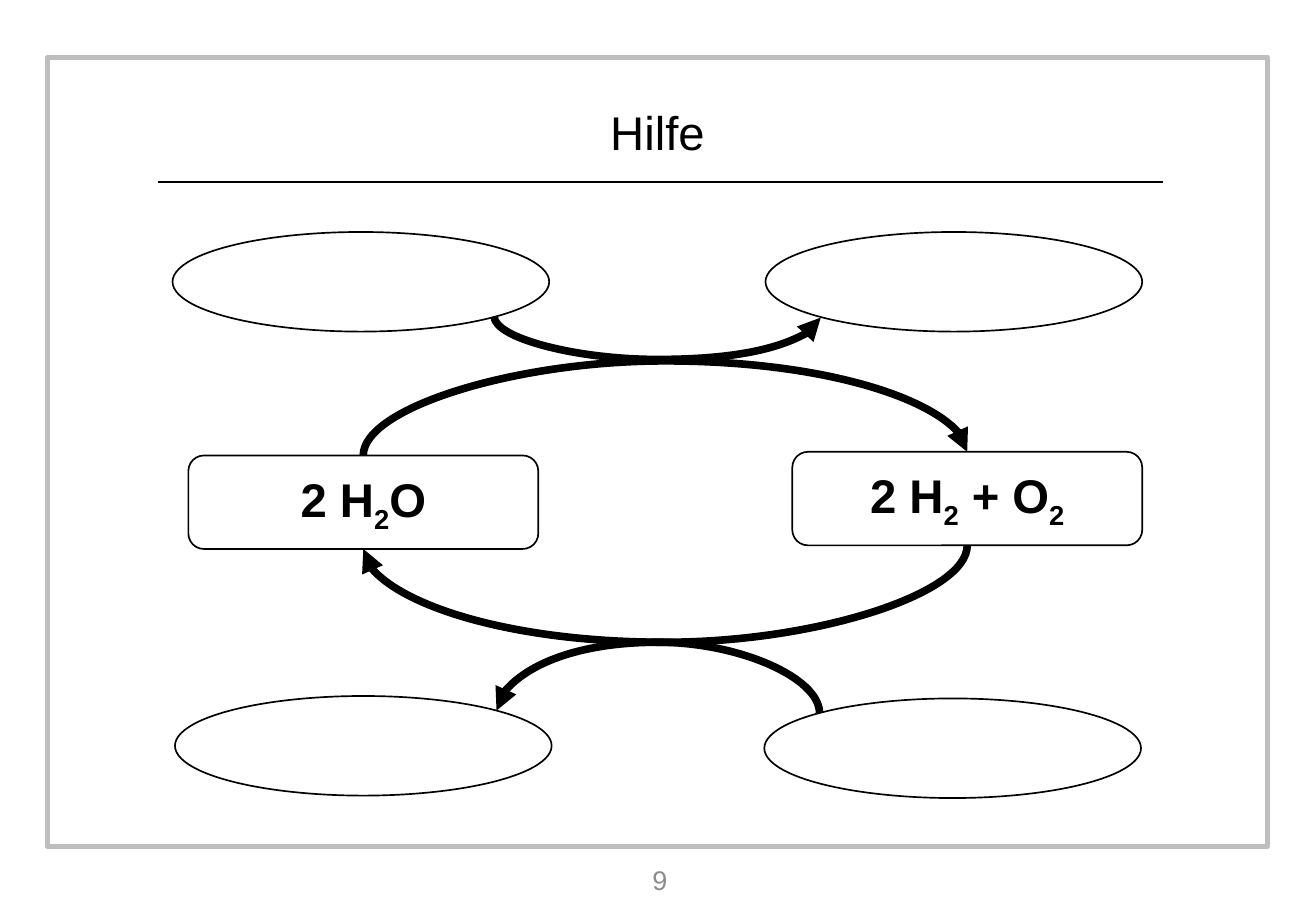
"""Build the help slide showing the water splitting cycle."""
from math import cos, pi, sin

from lxml.etree import SubElement
from pptx import Presentation
from pptx.dml.color import RGBColor
from pptx.enum.shapes import MSO_CONNECTOR, MSO_SHAPE
from pptx.enum.text import MSO_ANCHOR, PP_ALIGN
from pptx.oxml.ns import qn
from pptx.util import Inches, Pt

WIDTH, HEIGHT = 10.83, 7.5
BLACK, WHITE, FRAME_GREY, NUMBER_GREY = "000000", "FFFFFF", "BFBFBF", "8C8C8C"
TITLE, PAGE = "Hilfe", "9"
BOX_SIZE, OVAL_SIZE = (2.88, 0.77), (3.1, 0.82)
SUBSTANCES = {
    "water": (1.55, 3.75, ["2 H", "2", "O"]),
    "gases": (6.52, 3.72, ["2 H", "2", " + O", "2"]),
}
BLANKS = {
    "top left": (1.42, 1.91),
    "top right": (6.3, 1.91),
    "bottom left": (1.44, 5.73),
    "bottom right": (6.29, 5.75),
}
UPPER_BEND, LOWER_BEND = 2.97, 5.29
ARROWS = [
    ("water", 0, "gases", 0, UPPER_BEND, 90),
    ("gases", 2, "water", 2, LOWER_BEND, 90),
    ("top left", 5, "top right", 3, UPPER_BEND, 270),
    ("bottom right", 1, "bottom left", 7, LOWER_BEND, 270),
]


def color(value):
    return RGBColor.from_string(value)


def style_line(line, value, width):
    line.color.rgb = color(value)
    line.width = Pt(width)


def write(shape, parts, size, value, bold=False):
    """Write centred text; every second part is a subscript."""
    frame = shape.text_frame
    frame.vertical_anchor = MSO_ANCHOR.MIDDLE
    paragraph = frame.paragraphs[0]
    paragraph.alignment = PP_ALIGN.CENTER
    font = paragraph.font
    font.name, font.size, font.bold = "Arial", Pt(size), bold
    font.color.rgb = color(value)
    for index, part in enumerate(parts):
        run = paragraph.add_run()
        run.text = part
        if index % 2:
            run._r.get_or_add_rPr().set("baseline", "-25000")


def add_outline(slide, kind, box, value=BLACK, width=1, fill=WHITE):
    shape = slide.shapes.add_shape(kind, *map(Inches, box))
    shape.shadow.inherit = False
    if fill:
        shape.fill.solid()
        shape.fill.fore_color.rgb = color(fill)
    else:
        shape.fill.background()
    style_line(shape.line, value, width)
    return shape


def add_line(slide, kind, start, end, width):
    line = slide.shapes.add_connector(kind, *map(Inches, start + end))
    style_line(line.line, BLACK, width)
    SubElement(line._element.spPr, qn("a:effectLst"))
    return line


def site(shape, index):
    """Return a connection site in inches, counted anticlockwise from the top."""
    middle_x = shape.left + shape.width / 2
    middle_y = shape.top + shape.height / 2
    steps = 8 if shape.auto_shape_type == MSO_SHAPE.OVAL else 4
    angle = 2 * pi * index / steps
    x = middle_x - shape.width / 2 * sin(angle)
    y = middle_y - shape.height / 2 * cos(angle)
    return x / Inches(1), y / Inches(1)


def add_arrow(slide, source, source_site, target, target_site, bend, turn):
    """Join two shapes by a curve that leaves and arrives vertically."""
    start, end = site(source, source_site), site(target, target_site)
    (x1, y1), (x2, y2) = start, end
    rise = y2 - y1 if abs(y2 - y1) > 0.005 else 0.01
    arrow = add_line(slide, MSO_CONNECTOR.CURVE, start, end, 4.5)
    across, along = abs(rise), abs(x2 - x1)
    arrow.left = Inches((x1 + x2 - across) / 2)
    arrow.top = Inches((y1 + y2 - along) / 2)
    arrow.width, arrow.height = Inches(across), Inches(along)

    properties = arrow._element.spPr
    turned_back = turn == 270
    transform = properties.find(qn("a:xfrm"))
    transform.set("rot", str(turn * 60000))
    transform.set("flipH", str(int((rise < 0) != turned_back)))
    transform.set("flipV", str(int((x1 < x2) != turned_back)))
    guides = properties.find(qn("a:prstGeom")).get_or_add_avLst()
    share = round((bend - y1) / rise * 100000)
    SubElement(guides, qn("a:gd"), name="adj1", fmla=f"val {share}")
    SubElement(properties.find(qn("a:ln")), qn("a:tailEnd"), type="triangle")

    joints = arrow._element.nvCxnSpPr.cNvCxnSpPr
    for tag, shape, index in (("a:stCxn", source, source_site), ("a:endCxn", target, target_site)):
        SubElement(joints, qn(tag), id=str(shape.shape_id), idx=str(index))


def main():
    deck = Presentation()
    deck.slide_width, deck.slide_height = Inches(WIDTH), Inches(HEIGHT)
    slide = deck.slides.add_slide(deck.slide_layouts[5])

    add_outline(slide, MSO_SHAPE.RECTANGLE, (0.39, 0.47, 10.04, 6.5), FRAME_GREY, 3, None)
    add_line(slide, MSO_CONNECTOR.STRAIGHT, (1.3, 1.5), (9.57, 1.5), 1.5)

    title = slide.shapes.title
    title.left, title.top, title.width, title.height = map(Inches, (4.92, 0.79, 0.98, 0.59))
    write(title, [TITLE], 28, BLACK)
    title.text_frame.word_wrap = False

    number = slide.shapes.add_textbox(*map(Inches, (4.21, 7.05, 2.44, 0.39)))
    number.text_frame.word_wrap = True
    write(number, [PAGE], 16, NUMBER_GREY)

    nodes = {}
    for name, (left, top, formula) in SUBSTANCES.items():
        nodes[name] = add_outline(slide, MSO_SHAPE.ROUNDED_RECTANGLE, (left, top, *BOX_SIZE))
        write(nodes[name], formula, 28, BLACK, True)
    for name, corner in BLANKS.items():
        nodes[name] = add_outline(slide, MSO_SHAPE.OVAL, corner + OVAL_SIZE)
    for source, source_site, target, target_site, bend, turn in ARROWS:
        add_arrow(slide, nodes[source], source_site, nodes[target], target_site, bend, turn)

    deck.save("out.pptx")


if __name__ == "__main__":
    main()
